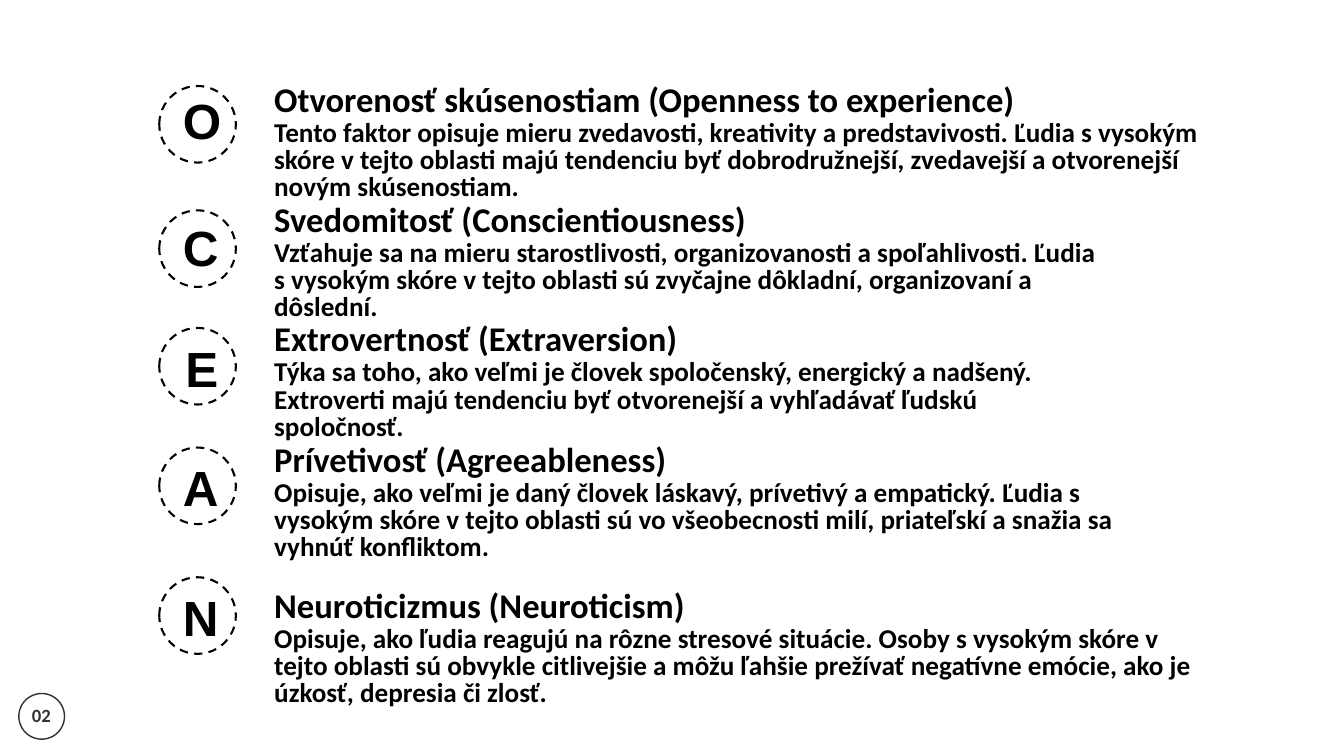
from dataclasses import dataclass

from pptx import Presentation
from pptx.dml.color import RGBColor
from pptx.enum.dml import MSO_LINE
from pptx.enum.shapes import MSO_SHAPE
from pptx.enum.text import MSO_ANCHOR, MSO_AUTO_SIZE, PP_ALIGN
from pptx.util import Inches, Pt

BLACK = "000000"
GREY = "323232"
WHITE = "FFFFFF"
TEXT_LEFT = 4.08
BODY_OFFSET = 0.74


@dataclass
class Trait:
    """One personality trait with its vertical places and body width."""
    letter: str
    heading: str
    body: str
    circle_top: float
    letter_top: float
    heading_top: float
    body_width: float
    letter_left: float = 2.72


TRAITS = [
    Trait("O", "Otvorenosť skúsenostiam (Openness to experience)",
          "Tento faktor opisuje mieru zvedavosti, kreativity a predstavivosti. "
          "Ľudia s vysokým skóre v tejto oblasti majú tendenciu byť "
          "dobrodružnejší, zvedavejší a otvorenejší novým skúsenostiam.",
          1.28, 1.2, 1.05, 14.16),
    Trait("C", "Svedomitosť (Conscientiousness)",
          "Vzťahuje sa na mieru starostlivosti, organizovanosti a spoľahlivosti. "
          "Ľudia s vysokým skóre v tejto oblasti sú zvyčajne dôkladní, "
          "organizovaní a dôslední.",
          3.13, 3.09, 2.84, 12.46),
    Trait("E", "Extrovertnosť (Extraversion)",
          "Týka sa toho, ako veľmi je človek spoločenský, energický a nadšený. "
          "Extroverti majú tendenciu byť otvorenejší a vyhľadávať ľudskú "
          "spoločnosť.",
          4.88, 4.88, 4.62, 12.46, 2.76),
    Trait("A", "Prívetivosť (Agreeableness)",
          "Opisuje, ako veľmi je daný človek láskavý, prívetivý a empatický. "
          "Ľudia s vysokým skóre v tejto oblasti sú vo všeobecnosti milí, "
          "priateľskí a snažia sa vyhnúť konfliktom.",
          6.66, 6.66, 6.41, 12.71),
    Trait("N", "Neuroticizmus (Neuroticism)",
          "Opisuje, ako ľudia reagujú na rôzne stresové situácie. Osoby "
          "s vysokým skóre v tejto oblasti sú obvykle citlivejšie a môžu ľahšie "
          "prežívať negatívne emócie, ako je úzkosť, depresia či zlosť.",
          8.59, 8.59, 8.58, 13.99),
]


def color(value):
    """Turn a hex string into a colour."""
    return RGBColor.from_string(value)


def add_circle(page, left, top, size, line_color, line_width):
    """Add an outlined circle without fill and return it."""
    circle = page.shapes.add_shape(
        MSO_SHAPE.OVAL, Inches(left), Inches(top), Inches(size), Inches(size))
    circle.shadow.inherit = False
    circle.fill.background()
    circle.line.color.rgb = color(line_color)
    circle.line.width = Pt(line_width)
    return circle


def add_text(page, text, left, top, width, height, size, spacing,
             font="Calibri", text_color=BLACK, inset=0):
    """Add a bold one-paragraph text box and return it."""
    box = page.shapes.add_textbox(
        Inches(left), Inches(top), Inches(width), Inches(height))
    frame = box.text_frame
    frame.word_wrap = True
    frame.auto_size = MSO_AUTO_SIZE.SHAPE_TO_FIT_TEXT
    frame.margin_left = frame.margin_right = Inches(inset)
    frame.margin_top = frame.margin_bottom = Inches(inset)
    para = frame.paragraphs[0]
    para.text = text
    para.line_spacing = Pt(spacing)
    para.font.name = font
    para.font.size = Pt(size)
    para.font.bold = True
    para.font.color.rgb = color(text_color)
    return box


def add_trait(page, trait):
    """Add the circled letter, heading and description of a trait."""
    circle = add_circle(page, 2.37, trait.circle_top, 1.14, BLACK, 2.25)
    circle.line.dash_style = MSO_LINE.DASH
    add_text(page, trait.letter, trait.letter_left, trait.letter_top,
             0.45, 0.99, 52.9, 74.1, font="Arial")
    add_text(page, trait.heading, TEXT_LEFT, trait.heading_top,
             12.71, 0.69, 37.1, 51.9)
    add_text(page, trait.body, TEXT_LEFT, trait.heading_top + BODY_OFFSET,
             trait.body_width, 0.8, 29.1, 29.1)


def add_page_number(page, number):
    """Add the circled page number in the lower left corner."""
    circle = add_circle(page, 0.28, 10.32, 0.68, GREY, 1.5)
    circle.fill.solid()
    circle.fill.fore_color.rgb = color(WHITE)
    box = add_text(page, number, 0.34, 10.4, 0.55, 0.53, 20, 20.8,
                   text_color=GREY, inset=0.06)
    frame = box.text_frame
    frame.auto_size = MSO_AUTO_SIZE.NONE
    frame.vertical_anchor = MSO_ANCHOR.MIDDLE
    frame.paragraphs[0].alignment = PP_ALIGN.CENTER


def main():
    """Build the slide and save the deck."""
    deck = Presentation()
    deck.slide_width = Inches(20)
    deck.slide_height = Inches(11.25)
    page = deck.slides.add_slide(deck.slide_layouts[6])
    add_page_number(page, "02")
    for trait in TRAITS:
        add_trait(page, trait)
    deck.save("out.pptx")


if __name__ == "__main__":
    main()
